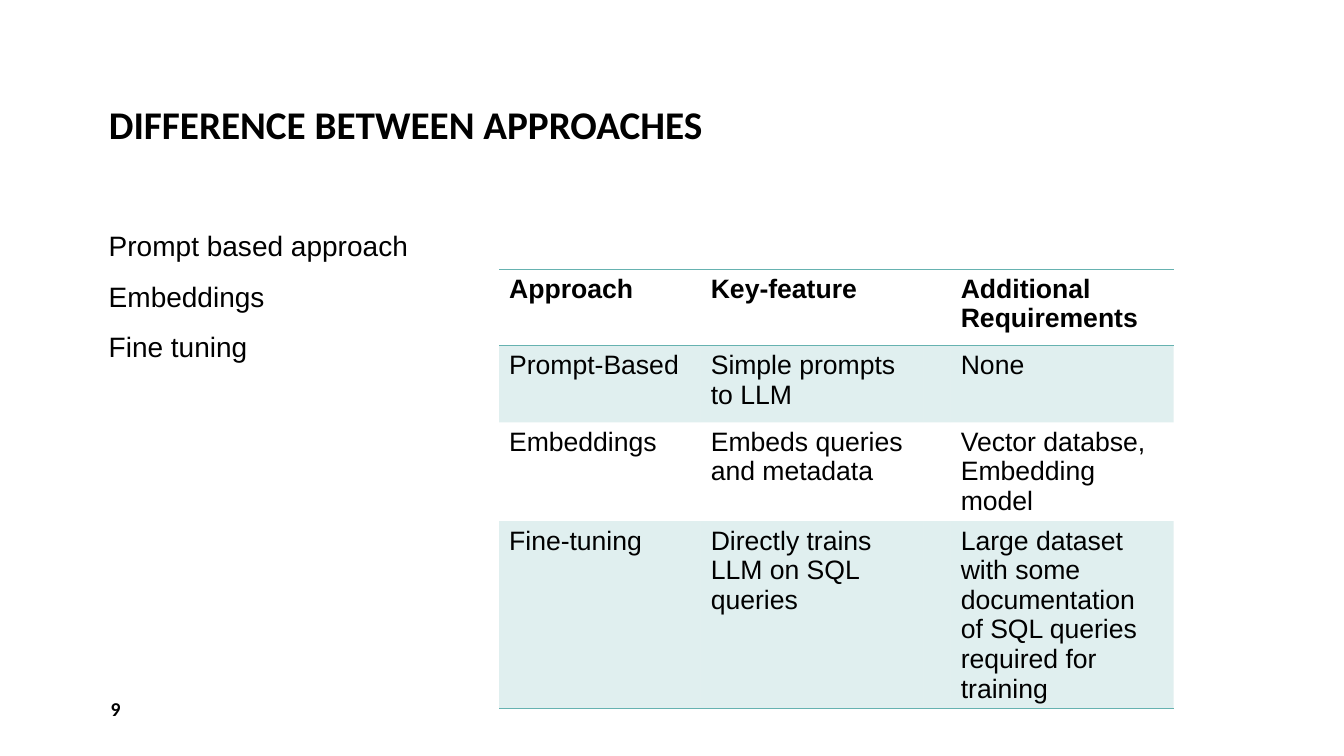
from dataclasses import dataclass

from lxml.etree import SubElement
from pptx import Presentation
from pptx.dml.color import RGBColor
from pptx.enum.text import MSO_ANCHOR, MSO_AUTO_SIZE, PP_ALIGN
from pptx.oxml.ns import qn
from pptx.shapes.base import BaseShape
from pptx.slide import Slide
from pptx.table import Table, _Cell
from pptx.text.text import TextFrame
from pptx.util import Inches, Pt


@dataclass(frozen=True)
class Theme:
    ink: str = "000000"
    accent: str = "66B2B0"
    band_opacity: int = 20
    heading_font: str = "Calibri"
    body_font: str = "Arial"
    title_size: int = 28
    list_size: int = 20
    table_size: int = 19
    number_size: int = 14
    rule_width: int = 1
    plain_table_style: str = "{2D5ABB26-0587-4C30-8999-92F81FD0307C}"


THEME = Theme()


@dataclass(frozen=True)
class Box:
    left: float
    top: float
    width: float
    height: float


@dataclass(frozen=True)
class TextBlock:
    box: Box
    lines: tuple[str, ...]
    font: str
    size: int
    bold: bool = False
    anchor: MSO_ANCHOR = MSO_ANCHOR.TOP
    space_after: int = 0
    line_spacing: float = 1.0


@dataclass(frozen=True)
class ApproachRow:
    height: float
    approach: str
    feature: str
    requirements: str

    def texts(self) -> tuple[str, ...]:
        return self.approach, self.feature, "", self.requirements


TITLE = TextBlock(
    Box(0.98, 0.15, 6.75, 1.37), ("DIFFERENCE BETWEEN APPROACHES",),
    THEME.heading_font, THEME.title_size, True, MSO_ANCHOR.BOTTOM, 0, 0.9,
)
TEXT_BOXES = (
    TextBlock(
        Box(0.98, 2.22, 3.3, 4.27),
        ("Prompt based approach", "Embeddings", "Fine tuning"),
        THEME.body_font, THEME.list_size, space_after=12,
    ),
    TextBlock(
        Box(1, 6.83, 1.3, 0.4), ("9",), THEME.heading_font,
        THEME.number_size, True, MSO_ANCHOR.MIDDLE, 6,
    ),
)
TABLE_LEFT, TABLE_TOP = 4.95, 2.67
COLUMN_WIDTHS = (2, 2.21, 0.27, 2.21)
ROWS = (
    ApproachRow(0.76, "Approach", "Key-feature", "Additional Requirements"),
    ApproachRow(0.76, "Prompt-Based", "Simple prompts to LLM", "None"),
    ApproachRow(0.76, "Embeddings", "Embeds queries and metadata",
                "Vector databse, Embedding model"),
    ApproachRow(1.07, "Fine-tuning", "Directly trains LLM on SQL queries",
                "Large dataset with some documentation of SQL queries required for training"),
)


def write_lines(frame: TextFrame, lines: tuple[str, ...], font: str, size: int,
                bold: bool, paragraph_format: dict[str, object]) -> None:
    frame.text = "\n".join(lines)
    font_format = {"name": font, "size": Pt(size), "bold": bold}
    for paragraph in frame.paragraphs:
        for name, value in paragraph_format.items():
            setattr(paragraph, name, value)
        for target in (paragraph.font, *(run.font for run in paragraph.runs)):
            for name, value in font_format.items():
                setattr(target, name, value)
            target.color.rgb = RGBColor.from_string(THEME.ink)


def format_text_shape(shape: BaseShape, block: TextBlock) -> None:
    for name in ("left", "top", "width", "height"):
        setattr(shape, name, Inches(getattr(block.box, name)))
    frame_format = {
        "word_wrap": True,
        "auto_size": MSO_AUTO_SIZE.NONE,
        "vertical_anchor": block.anchor,
    }
    for name, value in frame_format.items():
        setattr(shape.text_frame, name, value)
    write_lines(shape.text_frame, block.lines, block.font, block.size, block.bold, {
        "alignment": PP_ALIGN.LEFT,
        "space_before": Pt(0),
        "space_after": Pt(block.space_after),
        "line_spacing": block.line_spacing,
    })


def add_rule(cell: _Cell, side: str) -> None:
    properties = cell._tc.get_or_add_tcPr()
    line = SubElement(properties, qn(f"a:{side}"), w=str(Pt(THEME.rule_width)))
    fill = SubElement(line, qn("a:solidFill"))
    SubElement(fill, qn("a:srgbClr"), val=THEME.accent)


def fill_cell(cell: _Cell, banded: bool) -> None:
    if not banded:
        cell.fill.background()
        return
    cell.fill.solid()
    cell.fill.fore_color.rgb = RGBColor.from_string(THEME.accent)
    color = cell._tc.tcPr.find(qn("a:solidFill")).find(qn("a:srgbClr"))
    SubElement(color, qn("a:alpha"), val=str(THEME.band_opacity * 1000))


def fill_table(table: Table) -> None:
    table._tbl.tblPr.find(qn("a:tableStyleId")).text = THEME.plain_table_style
    for name, value in {"first_row": True, "horz_banding": False}.items():
        setattr(table, name, value)
    for column, width in zip(table.columns, COLUMN_WIDTHS):
        column.width = Inches(width)
    for index, row in enumerate(ROWS):
        table.rows[index].height = Inches(row.height)
        for cell, text in zip(table.rows[index].cells, row.texts()):
            write_lines(cell.text_frame, (text,), THEME.body_font, THEME.table_size,
                        index == 0, {"alignment": PP_ALIGN.LEFT})
            if index == 0:
                add_rule(cell, "lnT")
            if index in (0, len(ROWS) - 1):
                add_rule(cell, "lnB")
            fill_cell(cell, index % 2 == 1)


def add_approach_table(slide: Slide) -> None:
    frame = slide.shapes.add_table(
        len(ROWS), len(COLUMN_WIDTHS), Inches(TABLE_LEFT), Inches(TABLE_TOP),
        Inches(sum(COLUMN_WIDTHS)), Inches(sum(row.height for row in ROWS)),
    )
    fill_table(frame.table)


def main() -> None:
    presentation = Presentation()
    presentation.slide_width = Inches(13.33)
    presentation.slide_height = Inches(7.5)
    slide = presentation.slides.add_slide(presentation.slide_layouts[5])
    format_text_shape(slide.shapes.title, TITLE)
    for block in TEXT_BOXES:
        shape = slide.shapes.add_textbox(0, 0, 0, 0)
        format_text_shape(shape, block)
    add_approach_table(slide)
    presentation.save("out.pptx")


if __name__ == "__main__":
    main()
